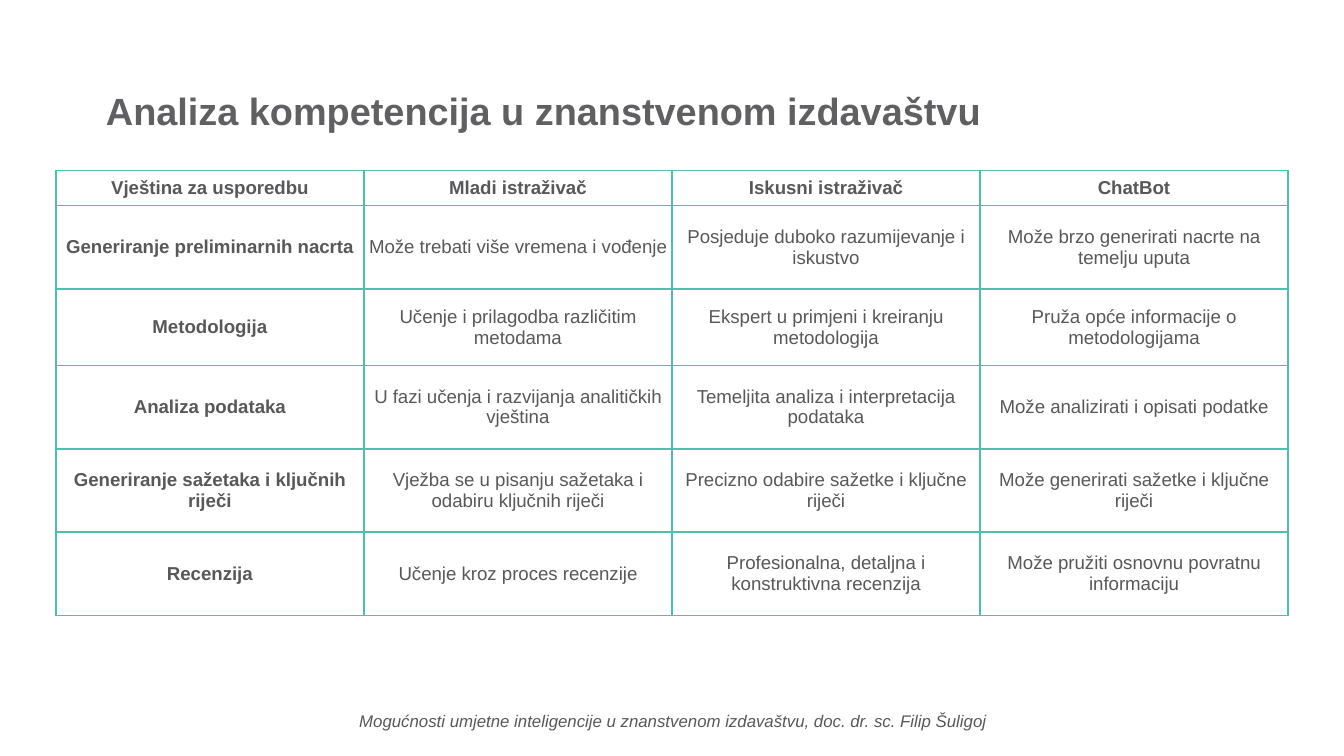
from dataclasses import dataclass

from lxml import etree
from pptx import Presentation
from pptx import util as u
from pptx.dml.color import RGBColor
from pptx.enum import text
from pptx.oxml import ns


@dataclass(frozen=True)
class Theme:
    font: str = "Arial"
    heading: str = "606062"
    body: str = "58585A"
    border: str = "4CC0AD"
    title_size: float = 20.3
    cell_size: float = 10
    footer_size: float = 9


theme = Theme()


def write(frame, words, size, color=theme.body, bold=False, italic=False,
          align=text.PP_ALIGN.CENTER, spacing=None):
    frame.word_wrap = True
    frame.vertical_anchor = text.MSO_ANCHOR.MIDDLE
    paragraph = frame.paragraphs[0]
    paragraph.alignment = align
    paragraph.line_spacing = spacing
    run = paragraph.add_run()
    run.text = words
    run.font.name = theme.font
    run.font.size = u.Pt(size)
    run.font.bold = bold
    run.font.italic = italic
    run.font.color.rgb = RGBColor.from_string(color)


def outline(cell):
    properties = cell._tc.get_or_add_tcPr()
    for position, side in enumerate(("lnL", "lnR", "lnT", "lnB")):
        line = etree.Element(ns.qn(f"a:{side}"), w=str(u.Pt(1)))
        fill = etree.SubElement(line, ns.qn("a:solidFill"))
        etree.SubElement(fill, ns.qn("a:srgbClr"), val=theme.border)
        properties.insert(position, line)


deck = Presentation()
deck.slide_width = u.Inches(10)
deck.slide_height = u.Inches(10 * 9 / 16)
slide = deck.slides.add_slide(deck.slide_layouts[6])

title = slide.shapes.add_textbox(u.Inches(0.69), u.Inches(0.3), u.Inches(8.62), u.Inches(1.09))
write(title.text_frame, "Analiza kompetencija u znanstvenom izdavaštvu", theme.title_size,
      color=theme.heading, bold=True, align=text.PP_ALIGN.LEFT, spacing=0.9)

footer = slide.shapes.add_textbox(u.Inches(2.26), u.Inches(5.21), u.Inches(5.49), u.Inches(0.3))
write(footer.text_frame,
      "Mogućnosti umjetne inteligencije u znanstvenom izdavaštvu, doc. dr. sc. Filip Šuligoj",
      theme.footer_size, italic=True)

skills = [
    ("Vještina za usporedbu", "Mladi istraživač", "Iskusni istraživač", "ChatBot"),
    ("Generiranje preliminarnih nacrta", "Može trebati više vremena i vođenje",
     "Posjeduje duboko razumijevanje i iskustvo", "Može brzo generirati nacrte na temelju uputa"),
    ("Metodologija", "Učenje i prilagodba različitim metodama",
     "Ekspert u primjeni i kreiranju metodologija", "Pruža opće informacije o metodologijama"),
    ("Analiza podataka", "U fazi učenja i razvijanja analitičkih vještina",
     "Temeljita analiza i interpretacija podataka", "Može analizirati i opisati podatke"),
    ("Generiranje sažetaka i ključnih riječi",
     "Vježba se u pisanju sažetaka i odabiru ključnih riječi",
     "Precizno odabire sažetke i ključne riječi", "Može generirati sažetke i ključne riječi"),
    ("Recenzija", "Učenje kroz proces recenzije",
     "Profesionalna, detaljna i konstruktivna recenzija",
     "Može pružiti osnovnu povratnu informaciju"),
]
row_heights = [0.26, 0.62, 0.57, 0.62, 0.62, 0.62]
table_width = u.Inches(9.17)

comparison = slide.shapes.add_table(
    len(skills), len(skills[0]),
    (deck.slide_width - table_width) // 2, u.Inches(1.27),
    table_width, u.Inches(sum(row_heights))).table
comparison.first_row = False
comparison.horz_banding = False

for r, (skill, height) in enumerate(zip(skills, row_heights)):
    comparison.rows[r].height = u.Inches(height)
    for c, words in enumerate(skill):
        cell = comparison.cell(r, c)
        cell.margin_left = cell.margin_right = u.Inches(0.03)
        cell.margin_top = cell.margin_bottom = u.Inches(0.02)
        cell.vertical_anchor = text.MSO_ANCHOR.MIDDLE
        cell.fill.background()
        outline(cell)
        write(cell.text_frame, words, theme.cell_size, bold=r == 0 or c == 0)

deck.save("out.pptx")
